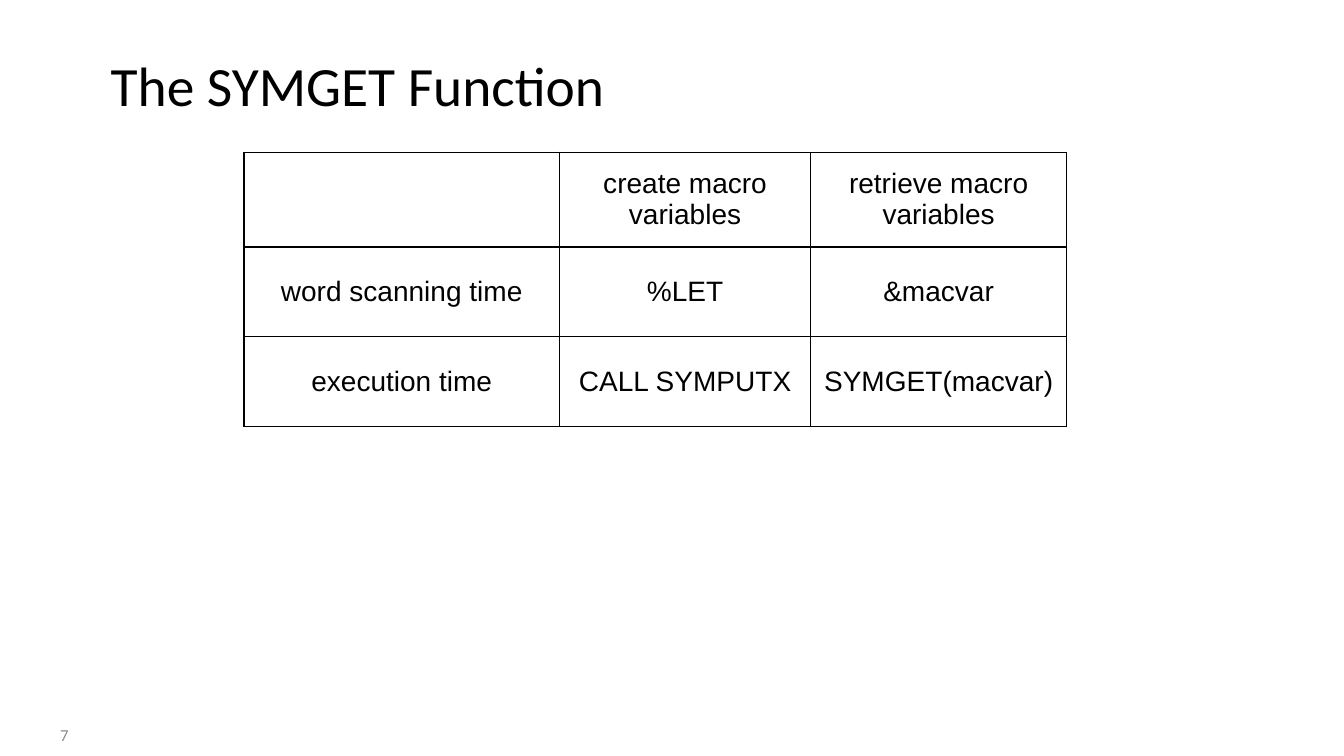
"""Build a slide comparing ways to create and retrieve macro variables."""
from dataclasses import dataclass

from lxml.etree import SubElement
from pptx import Presentation
from pptx.dml.color import RGBColor
from pptx.enum.text import MSO_ANCHOR, PP_ALIGN
from pptx.oxml.ns import qn
from pptx.slide import Slide
from pptx.table import _Cell
from pptx.text.text import TextFrame
from pptx.util import Inches, Pt

SLIDE_WIDTH, SLIDE_HEIGHT = 13.33, 7.5


@dataclass(frozen=True)
class TextStyle:
    font: str
    size: float
    color: str
    align: PP_ALIGN
    line_spacing: float = 1.0


@dataclass(frozen=True)
class Theme:
    title: TextStyle = TextStyle("Calibri", 39.6, "000000", PP_ALIGN.LEFT, 0.9)
    cell: TextStyle = TextStyle("Arial", 20, "000000", PP_ALIGN.CENTER)
    page_number: TextStyle = TextStyle("Calibri", 12, "8C8C8C", PP_ALIGN.RIGHT)
    background: str = "FFFFFF"
    border: str = "000000"
    border_width: float = 1
    inset: float = 0.1


@dataclass(frozen=True)
class Area:
    left: float
    top: float
    width: float
    height: float

    def emu(self) -> tuple[int, int, int, int]:
        return (Inches(self.left), Inches(self.top),
                Inches(self.width), Inches(self.height))


@dataclass(frozen=True)
class Label:
    text: str
    area: Area
    style: TextStyle


@dataclass(frozen=True)
class Grid:
    left: float
    top: float
    columns: tuple[float, ...]
    rows: tuple[float, ...]
    entries: tuple[tuple[str, ...], ...]

    def area(self) -> Area:
        return Area(self.left, self.top, sum(self.columns), sum(self.rows))


THEME = Theme()
NUMBER_HEIGHT = 0.42
LABELS = (
    Label("The SYMGET Function", Area(1, 0.5, SLIDE_WIDTH - 1, 0.75), THEME.title),
    Label("7", Area(0, SLIDE_HEIGHT - NUMBER_HEIGHT, 0.78, NUMBER_HEIGHT),
          THEME.page_number),
)
MACRO_METHODS = Grid(
    left=2.42,
    top=1.51,
    columns=(3.13, 2.49, 2.54),
    rows=(0.94, 0.89, 0.89),
    entries=(
        ("", "create macro variables", "retrieve macro variables"),
        ("word scanning time", "%LET", "&macvar"),
        ("execution time", "CALL SYMPUTX", "SYMGET(macvar)"),
    ),
)


def write(frame: TextFrame, text: str, style: TextStyle) -> None:
    frame.text = text
    frame.word_wrap = True
    paragraph = frame.paragraphs[0]
    paragraph.alignment = style.align
    paragraph.line_spacing = style.line_spacing
    for run in paragraph.runs:
        run.font.name = style.font
        run.font.size = Pt(style.size)
        run.font.color.rgb = RGBColor.from_string(style.color)


def add_label(slide: Slide, label: Label) -> None:
    frame = slide.shapes.add_textbox(*label.area.emu()).text_frame
    write(frame, label.text, label.style)
    frame.vertical_anchor = MSO_ANCHOR.MIDDLE


def add_borders(cell: _Cell) -> None:
    properties = cell._tc.get_or_add_tcPr()
    for side in ("a:lnL", "a:lnR", "a:lnT", "a:lnB"):
        line = SubElement(properties, qn(side), w=str(Pt(THEME.border_width)))
        fill = SubElement(line, qn("a:solidFill"))
        SubElement(fill, qn("a:srgbClr"), val=THEME.border)


def add_grid(slide: Slide, grid: Grid) -> None:
    table = slide.shapes.add_table(
        len(grid.rows), len(grid.columns), *grid.area().emu()).table
    table.first_row = table.horz_banding = False
    for column, width in zip(table.columns, grid.columns):
        column.width = Inches(width)
    for row, height, entries in zip(table.rows, grid.rows, grid.entries):
        row.height = Inches(height)
        for cell, entry in zip(row.cells, entries):
            write(cell.text_frame, entry, THEME.cell)
            cell.vertical_anchor = MSO_ANCHOR.MIDDLE
            cell.margin_left = cell.margin_right = Inches(THEME.inset)
            cell.margin_top = cell.margin_bottom = Inches(THEME.inset)
            add_borders(cell)
            cell.fill.solid()
            cell.fill.fore_color.rgb = RGBColor.from_string(THEME.background)


def main() -> None:
    deck = Presentation()
    deck.slide_width = Inches(SLIDE_WIDTH)
    deck.slide_height = Inches(SLIDE_HEIGHT)
    slide = deck.slides.add_slide(deck.slide_layouts[6])
    for label in LABELS:
        add_label(slide, label)
    add_grid(slide, MACRO_METHODS)
    deck.save("out.pptx")


if __name__ == "__main__":
    main()
